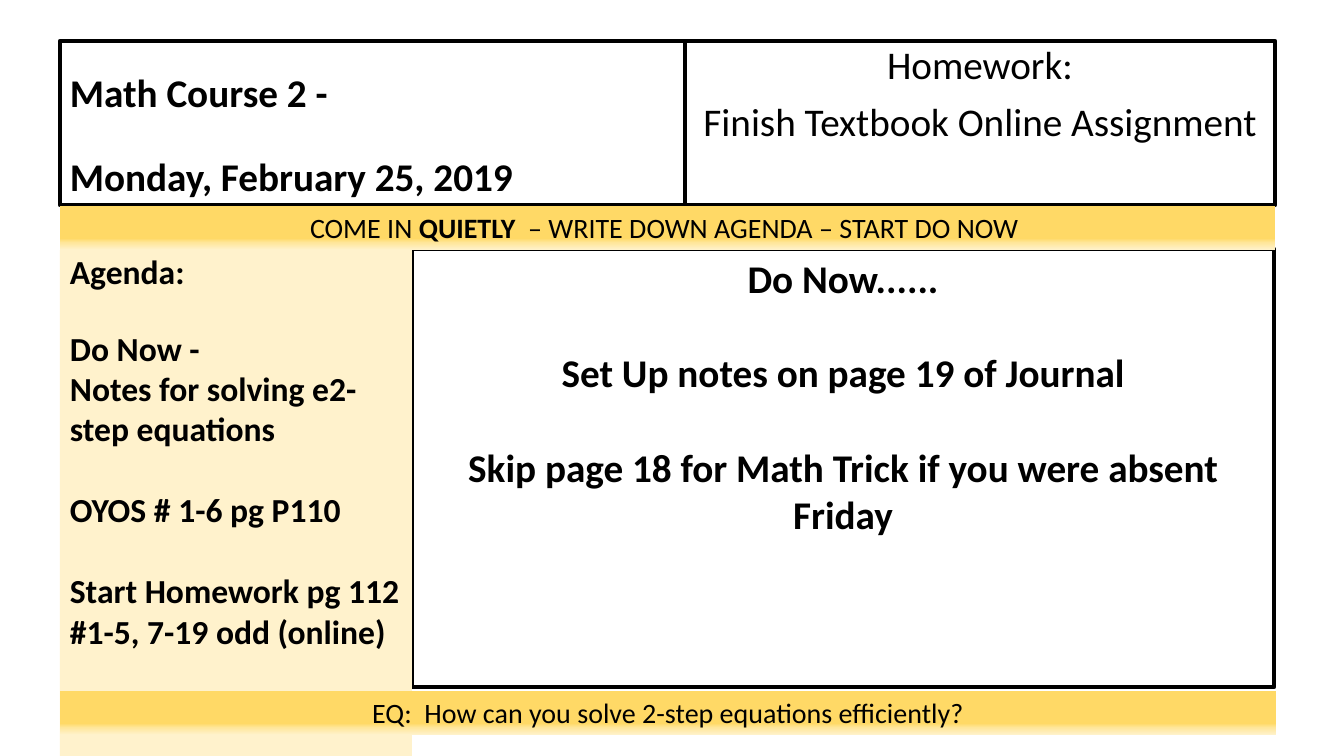
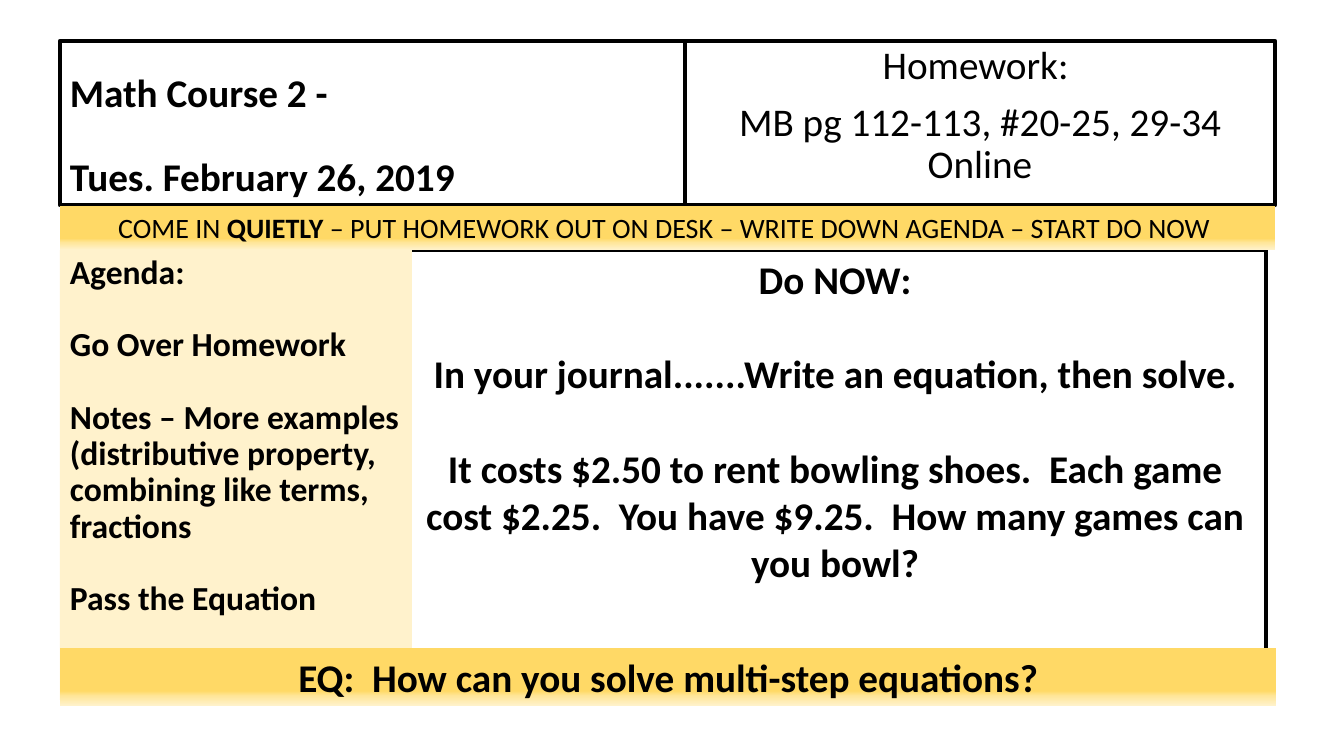
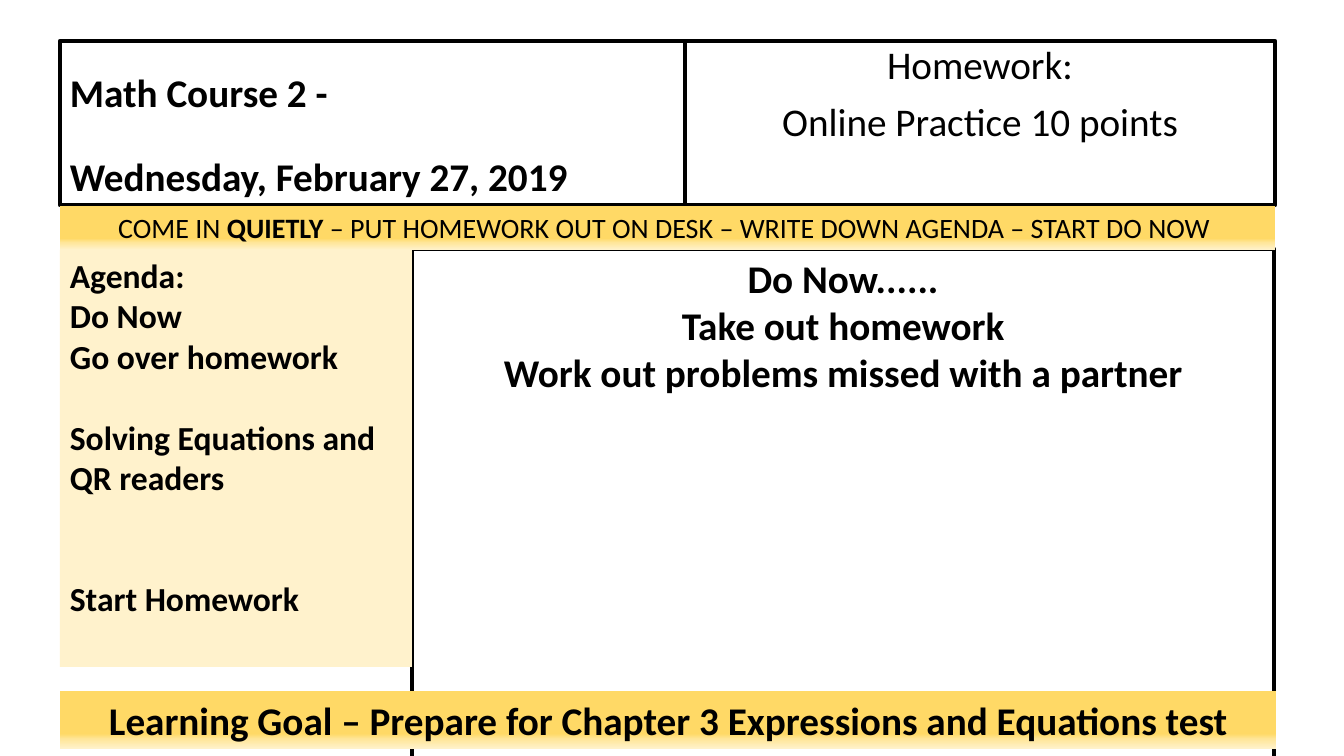
"""Build three daily agenda slides for a maths class."""
import lxml.etree
import pptx
import pptx.dml.color
import pptx.enum.text
import pptx.oxml.ns
import pptx.util

PIXEL = 914400 / 100.8
FONT = "Calibri"
BLACK = pptx.dml.color.RGBColor(0x00, 0x00, 0x00)
GOLD = pptx.dml.color.RGBColor(0xFF, 0xD9, 0x66)
LIGHT_GOLD = pptx.dml.color.RGBColor(0xFF, 0xE6, 0x99)
CREAM = pptx.dml.color.RGBColor(0xFF, 0xF2, 0xCC)
BAND_STOPS = [(0, GOLD), (74, GOLD), (83, LIGHT_GOLD), (100, CREAM)]
LEFT = pptx.enum.text.PP_ALIGN.LEFT
CENTER = pptx.enum.text.PP_ALIGN.CENTER
TOP = pptx.enum.text.MSO_ANCHOR.TOP
BOTTOM = pptx.enum.text.MSO_ANCHOR.BOTTOM


def add_panel(slide, box, paragraphs, size, bold=True, align=CENTER, anchor=TOP, outlined=False):
    """Add a text panel; each paragraph is (text or runs, space before, line spacing)."""
    shape = slide.shapes.add_textbox(*[round(length * PIXEL) for length in box])
    if outlined:
        shape.line.color.rgb = BLACK
        shape.line.width = pptx.util.Pt(3.25)
    frame = shape.text_frame
    frame.word_wrap = True
    frame.vertical_anchor = anchor
    for index, (content, gap, spacing) in enumerate(paragraphs):
        paragraph = frame.add_paragraph() if index else frame.paragraphs[0]
        paragraph.alignment = align
        paragraph.line_spacing = spacing
        paragraph.space_before = pptx.util.Pt(gap)
        runs = [(content, bold)] if isinstance(content, str) else content
        for text, run_bold in runs:
            run = paragraph.add_run()
            run.text = text
            run.font.name = FONT
            run.font.size = pptx.util.Pt(size)
            run.font.bold = run_bold
            run.font.color.rgb = BLACK
    return shape


def fill_band(shape):
    """Fill a band with the shared gold gradient, running downwards."""
    shape.fill.gradient()
    shape.fill.gradient_angle = 270
    stop_list = next(shape.element.iter(pptx.oxml.ns.qn("a:gsLst")))
    for stop in list(stop_list):
        stop_list.remove(stop)
    for position, color in BAND_STOPS:
        stop = lxml.etree.SubElement(stop_list, pptx.oxml.ns.qn("a:gs"), pos=str(position * 1000))
        lxml.etree.SubElement(stop, pptx.oxml.ns.qn("a:srgbClr"), val=str(color))


HOMEWORK_OUT = " – PUT HOMEWORK OUT ON DESK – WRITE DOWN AGENDA – START DO NOW "
DAYS = [
    {
        "date": "Monday, February 25, 2019",
        "homework": ["Homework:", "Finish Textbook Online Assignment"],
        "reminder": "  – WRITE DOWN AGENDA – START DO NOW ",
        "do_now": [
            ("Do Now......", 0, 1),
            ("Set Up notes on page 19 of Journal", 34, 1),
            ("Skip page 18 for Math Trick if you were absent Friday", 34, 1),
        ],
        "do_now_box": (412, 249, 862, 438),
        "agenda": [
            ("Agenda:", 0, 0.9),
            ("Do Now -", 26, 1),
            ("Notes for solving e2-step equations", 0, 1),
            ("OYOS # 1-6 pg P110", 29, 1),
            ("Start Homework pg 112 #1-5, 7-19 odd (online)", 29, 1),
        ],
        "agenda_height": 572,
        "goal": "EQ:  How can you solve 2-step equations efficiently?",
        "goal_band": (691, 44),
        "goal_size": 20,
        "goal_bold": False,
    },
    {
        "date": "Tues. February 26, 2019",
        "homework": ["Homework: ", "MB pg 112-113, #20-25, 29-34 Online"],
        "reminder": HOMEWORK_OUT,
        "do_now": [
            ("Do NOW:", 0, 1),
            ("In your journal.......Write an equation, then solve.", 34, 1),
            (
                "It costs $2.50 to rent bowling shoes.  Each game cost $2.25.  "
                "You have $9.25.  How many games can you bowl?",
                34,
                1,
            ),
        ],
        "do_now_box": (404, 250, 862, 438),
        "agenda": [
            ("Agenda:", 0, 0.9),
            ("Go Over Homework", 26, 0.9),
            (
                "Notes – More examples (distributive property, combining like terms, fractions",
                26,
                0.9,
            ),
            ("Pass the Equation", 26, 0.9),
        ],
        "agenda_height": 450,
        "goal": "EQ:  How can you solve multi-step equations?",
        "goal_band": (648, 58),
        "goal_size": 28,
        "goal_bold": True,
    },
    {
        "date": "Wednesday, February 27, 2019",
        "homework": ["Homework:", "Online Practice 10 points"],
        "reminder": HOMEWORK_OUT,
        "do_now": [
            ("Do Now......", 0, 1),
            ("Take out homework", 0, 1),
            ("Work out problems missed with a partner", 0, 1),
        ],
        "do_now_box": (412, 249, 862, 581),
        "agenda": [
            ("Agenda:", 0, 1),
            ("Do Now", 0, 1),
            ("Go over homework", 0, 1),
            ("Solving Equations and QR readers", 29, 1),
            ("Start Homework", 58, 1),
        ],
        "agenda_height": 417,
        "goal": "Learning Goal – Prepare for Chapter 3 Expressions and Equations test",
        "goal_band": (691, 58),
        "goal_size": 28,
        "goal_bold": True,
    },
]

presentation = pptx.Presentation()
presentation.slide_width = round(1344 * PIXEL)
presentation.slide_height = round(756 * PIXEL)

for day in DAYS:
    slide = presentation.slides.add_slide(presentation.slide_layouts[6])

    title = [("Math Course 2 -", 0, 0.9), (day["date"], 30, 0.9)]
    add_panel(slide, (60, 41, 625, 164), title, 28, align=LEFT, anchor=BOTTOM, outlined=True)

    homework = [(text, 10 * index, 0.9) for index, text in enumerate(day["homework"])]
    add_panel(slide, (685, 41, 590, 164), homework, 28, bold=False, outlined=True)

    add_panel(slide, day["do_now_box"], day["do_now"], 28, outlined=True)

    reminder = [("COME IN ", False), ("QUIETLY", True), (day["reminder"], False)]
    fill_band(add_panel(slide, (60, 206, 1215, 44), [(reminder, 0, 1)], 20))

    agenda_box = (60, 250, 352, day["agenda_height"])
    agenda_panel = add_panel(slide, agenda_box, day["agenda"], 24, align=LEFT)
    agenda_panel.fill.solid()
    agenda_panel.fill.fore_color.rgb = CREAM

    goal_top, goal_height = day["goal_band"]
    goal_box = (60, goal_top, 1216, goal_height)
    goal = [(day["goal"], 0, 1)]
    fill_band(add_panel(slide, goal_box, goal, day["goal_size"], bold=day["goal_bold"]))

presentation.save("out.pptx")
